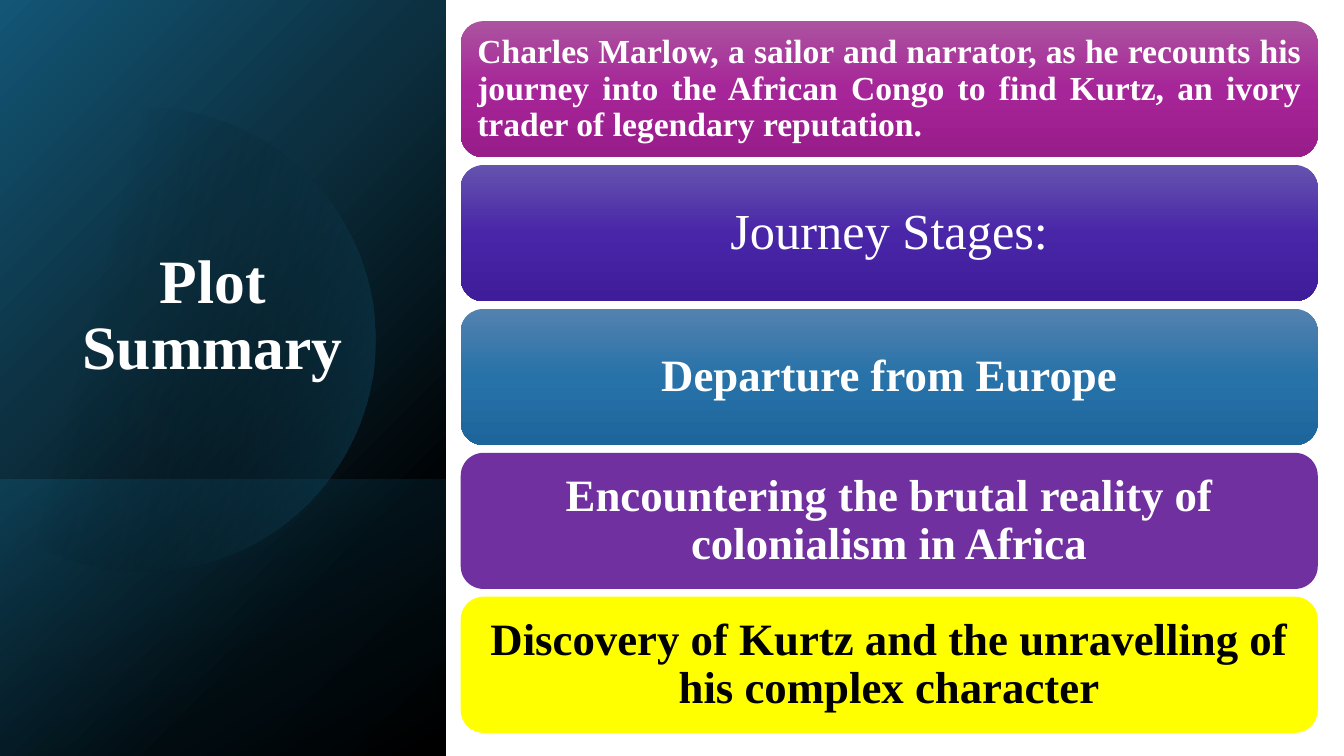
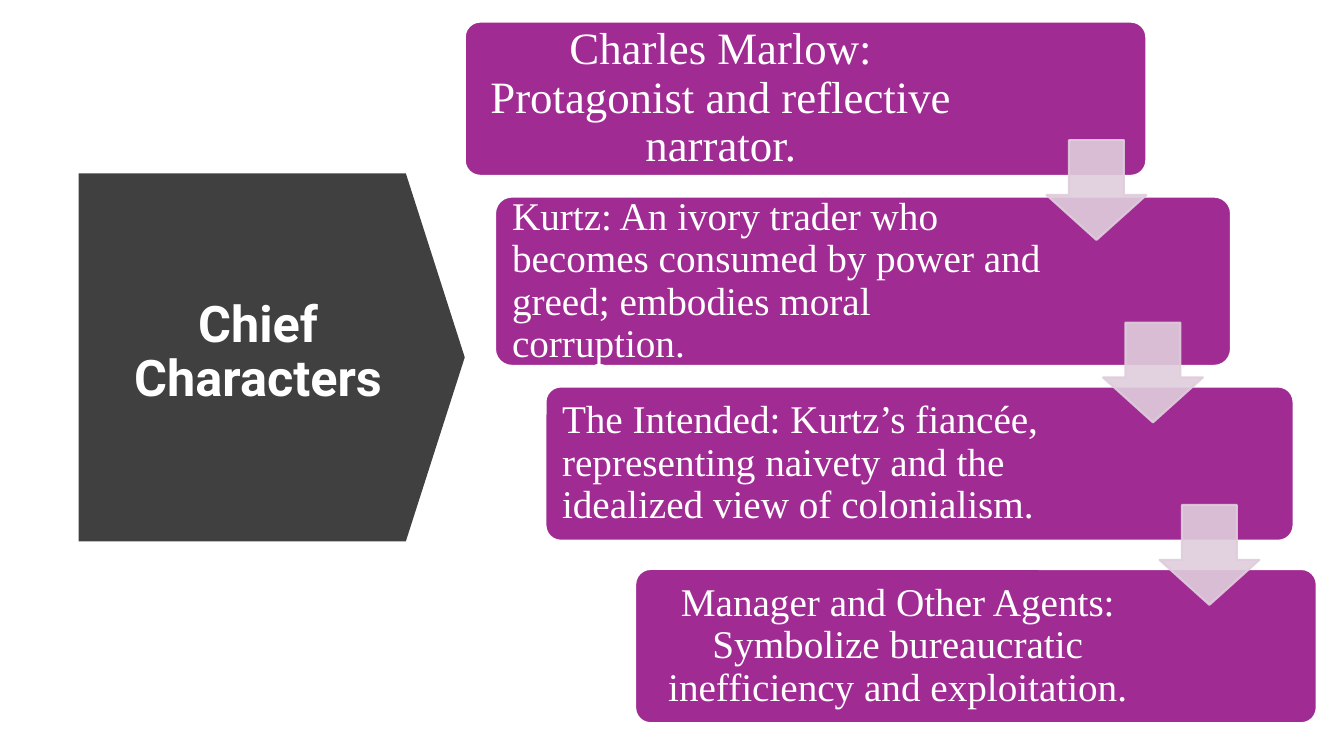
from dataclasses import dataclass
from math import acos, cos, sin

from lxml import etree
from pptx import Presentation
from pptx.dml.color import RGBColor
from pptx.enum.shapes import MSO_SHAPE
from pptx.enum.text import MSO_ANCHOR, PP_ALIGN
from pptx.oxml.ns import qn
from pptx.util import Inches, Pt

RECTANGLE = MSO_SHAPE.RECTANGLE
ROUNDED = MSO_SHAPE.ROUNDED_RECTANGLE
PENTAGON = MSO_SHAPE.PENTAGON
DOWN_ARROW = MSO_SHAPE.DOWN_ARROW
LEFT, CENTER, JUSTIFY = PP_ALIGN.LEFT, PP_ALIGN.CENTER, PP_ALIGN.JUSTIFY
MIDDLE = MSO_ANCHOR.MIDDLE


@dataclass(frozen=True)
class Theme:
    # Colours
    white: str = "FFFFFF"
    black: str = "000000"
    charcoal: str = "404040"
    magenta: str = "A02B93"
    pale_pink: str = "DFCDDC"
    purple: str = "7030A0"
    yellow: str = "FFFF00"
    # Gradients: (position, colour, opacity), positions and opacities in percent
    panel: tuple = ((0, "135676", 100), (37, "0C3040", 100),
                    (76, "000406", 100), (100, "000000", 100))
    band: tuple = ((0, "156082", 36), (100, "000000", 30))
    disc: tuple = ((29, "000000", 0), (100, "156082", 43))
    magenta_fade: tuple = ((0, "AC53A0", 100), (50, "A62598", 100), (100, "991C8B", 100))
    violet_fade: tuple = ((0, "6553AE", 100), (50, "4926A8", 100), (100, "3E1C9A", 100))
    blue_fade: tuple = ((0, "5382AF", 100), (50, "2772A9", 100), (100, "1D669C", 100))
    # Type
    serif: str = "Times New Roman"
    sans: str = "Roboto"
    plot_title: float = 44
    large: float = 36
    medium: float = 32
    normal: float = 28
    small: float = 24
    line_spacing: float = 0.9
    outline: float = 1.5


class Deck:
    """Holds the theme and the current slide."""

    def __init__(self, theme):
        self.theme = theme
        self.presentation = Presentation()
        self.presentation.slide_width = Inches(13.33)
        self.presentation.slide_height = Inches(7.5)
        self.slide = None

    def new_slide(self):
        layout = self.presentation.slide_layouts[6]
        self.slide = self.presentation.slides.add_slide(layout)

    # Fill and line
    def set_opacity(self, color_element, percent):
        if percent < 100:
            etree.SubElement(color_element, qn("a:alpha"), val=str(percent * 1000))

    def paint_solid(self, fill, color, opacity):
        fill.solid()
        fill.fore_color.rgb = RGBColor.from_string(color)
        return opacity

    def paint_gradient(self, shape, stops, angle):
        shape.fill.gradient()
        gradient = shape.element.spPr.find(qn("a:gradFill"))
        stop_list = gradient.find(qn("a:gsLst"))
        for old_stop in list(stop_list):
            stop_list.remove(old_stop)
        for position, color, opacity in stops:
            stop = etree.SubElement(stop_list, qn("a:gs"), pos=str(position * 1000))
            color_element = etree.SubElement(stop, qn("a:srgbClr"), val=color)
            self.set_opacity(color_element, opacity)
        gradient.find(qn("a:lin")).set("ang", str(angle * 60000))

    def paint(self, shape, fill, line=None, angle=90, opacity=100):
        shape.shadow.inherit = False
        if isinstance(fill, tuple):
            self.paint_gradient(shape, fill, angle)
        else:
            shape.fill.solid()
            shape.fill.fore_color.rgb = RGBColor.from_string(fill)
        if line:
            shape.line.color.rgb = RGBColor.from_string(line)
            shape.line.width = Pt(self.theme.outline)
        else:
            shape.line.fill.background()
        for color_element in shape.element.spPr.iter(qn("a:srgbClr")):
            self.set_opacity(color_element, opacity)

    # Elements
    def shape(self, kind, box, fill, adjustments=(), **paint):
        shape = self.slide.shapes.add_shape(kind, *map(Inches, box))
        for index, value in enumerate(adjustments):
            shape.adjustments[index] = value
        self.paint(shape, fill, **paint)
        return shape

    def disc(self, center_x, center_y, radius, fill, angle):
        """A circle cut off at the left edge of the slide."""
        limit = acos(-center_x / radius)
        steps = 120
        points = []
        for step in range(steps + 1):
            turn = limit * (2 * step / steps - 1)
            points.append((Inches(center_x + radius * cos(turn)),
                           Inches(center_y + radius * sin(turn))))
        builder = self.slide.shapes.build_freeform(*points[0])
        builder.add_line_segments(points[1:], close=True)
        self.paint(builder.convert_to_shape(), fill, angle=angle)

    def set_text(self, shape, text, size, color, align=CENTER, bold=False,
                 font=None, inset=0.1, right_inset=None):
        frame = shape.text_frame
        paragraph = frame.paragraphs[0]
        run = paragraph.add_run()
        run.text = text
        frame_format = {
            "word_wrap": True,
            "vertical_anchor": MIDDLE,
            "margin_left": Inches(inset),
            "margin_top": Inches(inset),
            "margin_bottom": Inches(inset),
            "margin_right": Inches(inset if right_inset is None else right_inset),
        }
        paragraph_format = {"alignment": align, "line_spacing": self.theme.line_spacing}
        font_format = {"name": font or self.theme.serif, "size": Pt(size), "bold": bold}
        for target, values in ((frame, frame_format), (paragraph, paragraph_format),
                               (run.font, font_format)):
            for name, value in values.items():
                setattr(target, name, value)
        run.font.color.rgb = RGBColor.from_string(color)

    def title(self, text, box, size, font):
        text_box = self.slide.shapes.add_textbox(*map(Inches, box))
        self.set_text(text_box, text, size, self.theme.white, bold=True, font=font)

    def card(self, box, fill, text, size, color=None, adjustments=(), line=None, **text_style):
        card = self.shape(ROUNDED, box, fill, adjustments, line=line)
        self.set_text(card, text, size, color or self.theme.white, **text_style)


def plot_summary(deck):
    theme = deck.theme
    deck.new_slide()

    # Dark panel with its title
    panel_width, band_top = 4.42, 4.76
    deck.shape(RECTANGLE, (0, 0, panel_width, 7.5), theme.panel, angle=45)
    deck.shape(RECTANGLE, (0, band_top, panel_width, 7.5 - band_top), theme.band, angle=60)
    deck.disc(1.42, 3.37, 2.3, theme.disc, angle=14)
    deck.title("Plot Summary", (0.64, 1.84, 2.94, 2.6), theme.plot_title, theme.serif)

    # Stack of equal cards
    cards = [
        (theme.magenta_fade,
         "Charles Marlow, a sailor and narrator, as he recounts his journey into the "
         "African Congo to find Kurtz, an ivory trader of legendary reputation.",
         theme.small, {"align": JUSTIFY, "bold": True}),
        (theme.violet_fade, "Journey Stages:", theme.large, {"inset": 0.15}),
        (theme.blue_fade, "Departure from Europe", theme.medium,
         {"bold": True, "inset": 0.13}),
        (theme.purple, "Encountering the brutal reality of colonialism in Africa",
         theme.medium, {"bold": True, "inset": 0.13}),
        (theme.yellow, "Discovery of Kurtz and the unravelling of his complex character",
         theme.medium, {"bold": True, "inset": 0.13, "color": theme.black}),
    ]
    top, bottom, height = 0.21, 7.27, 1.35
    pitch = (bottom - top - height) / (len(cards) - 1)
    for index, (fill, text, size, style) in enumerate(cards):
        deck.card((4.57, top + index * pitch, 8.5, height), fill, text, size, **style)


def chief_characters(deck):
    theme = deck.theme
    deck.new_slide()

    # Pointed title block
    deck.shape(PENTAGON, (0.78, 1.72, 3.83, 3.65), theme.charcoal, (0.16,))
    deck.title("Chief Characters", (1.12, 2.11, 2.88, 2.79), theme.large, theme.sans)

    # Descending cards: left, width, height, text width, size, alignment, text
    cards = [
        (4.61, 6.76, 1.53, 4.98, theme.medium, CENTER,
         "Charles Marlow: Protagonist and reflective narrator."),
        (4.91, 7.3, 1.68, 5.52, theme.normal, LEFT,
         "Kurtz: An ivory trader who becomes consumed by power and greed; "
         "embodies moral corruption."),
        (5.41, 7.42, 1.53, 5.62, theme.normal, LEFT,
         "The Intended: Kurtz’s fiancée, representing naivety and the idealized "
         "view of colonialism."),
        (6.3, 6.76, 1.53, 5.11, theme.normal, CENTER,
         "Manager and Other Agents: Symbolize bureaucratic inefficiency and exploitation."),
    ]
    first_middle, pitch, inset, corner = 0.98, 1.81, 0.12, 0.05
    for index, (left, width, height, text_width, size, align, text) in enumerate(cards):
        top = first_middle + index * pitch - height / 2
        deck.card((left, top, width, height), theme.magenta, text, size,
                  adjustments=(0.1,), line=theme.white, align=align, inset=inset,
                  right_inset=width - 2 * corner - text_width + inset)

    # Arrows from each card to the next
    for index in range(len(cards) - 1):
        deck.shape(DOWN_ARROW, (10.38 + 0.56 * index, 1.39 + pitch * index, 0.99, 0.99),
                   theme.pale_pink, (0.55, 0.45), line=theme.pale_pink, opacity=90)


def main():
    deck = Deck(Theme())
    plot_summary(deck)
    chief_characters(deck)
    deck.presentation.save("out.pptx")


if __name__ == "__main__":
    main()
